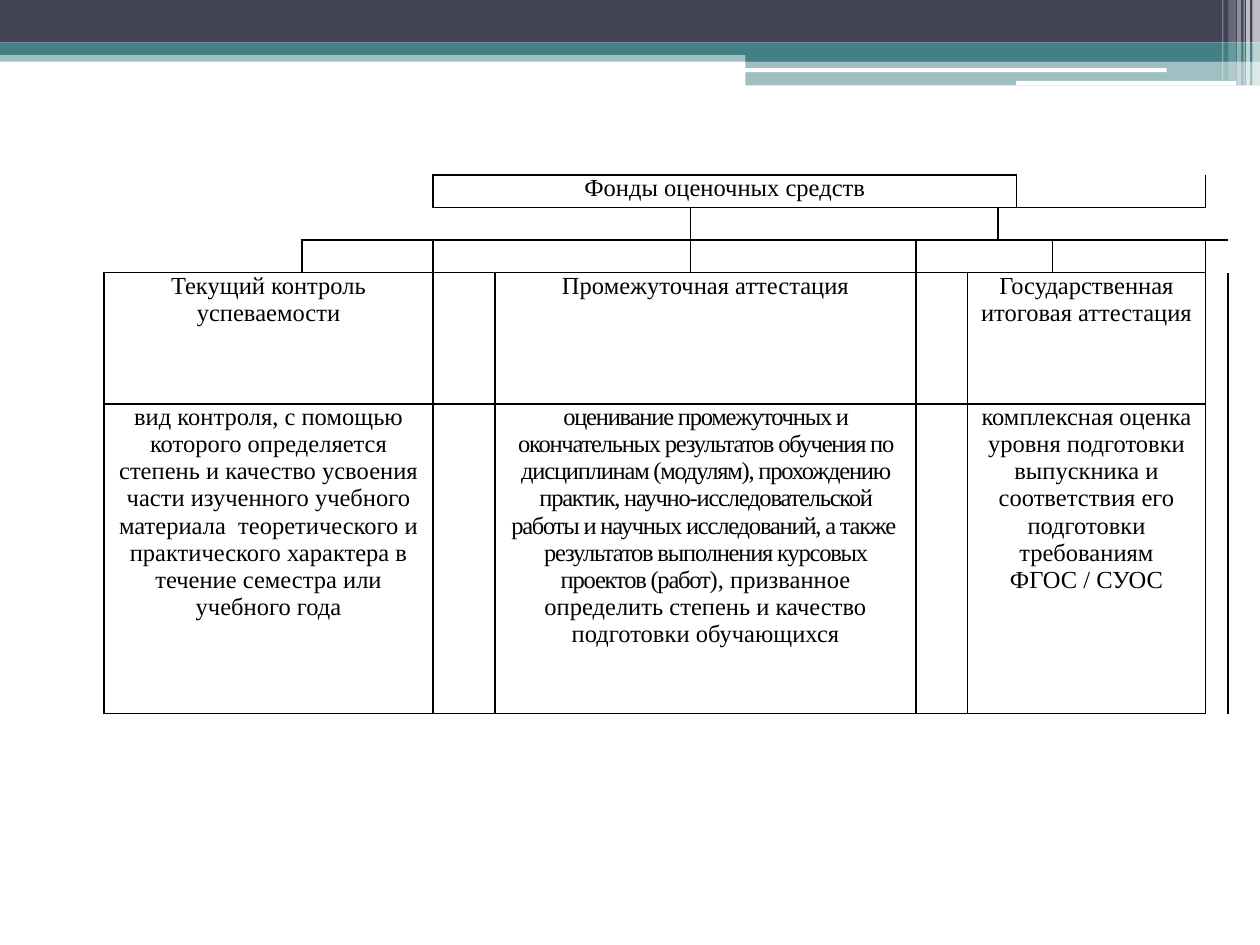
from lxml.etree import SubElement
from pptx import Presentation
from pptx.dml.color import RGBColor
from pptx.enum.shapes import MSO_SHAPE as SHAPE
from pptx.enum.text import PP_ALIGN as ALIGN
from pptx.oxml import parse_xml
from pptx.oxml.ns import nsdecls, qn
from pptx.util import Pt

COLORS = {"navy": "424456", "teal": "438086", "white": "FFFFFF", "black": "000000"}
FONT = "Times New Roman"
NO_STYLE = "{2D5ABB26-0587-4C30-8999-92F81FD0307C}"

# left, top, width, height, colour, opacity in percent
BANDS = [
    (0, 28.8, 720, 6.5, "teal", 50),
    (0, 0, 720, 24.2, "navy", 100),
    (0, 24.2, 720, 7.2, "teal", 100),
    (426, 28, 294, 7.2, "teal", 100),
    (426, 34.6, 294, 14.2, "teal", 50),
]
HIGHLIGHTS = [
    (425.5, 39, 241.2, 2.2, "white", 100),
    (580.5, 46.2, 126, 2.6, "white", 100),
]
# left, width, height, opacity of the vertical stripes
STRIPES = [
    (715.7, 4.3, 49, 65), (712.1, 2.2, 49, 65), (710.6, 0.7, 49, 60),
    (707, 2.2, 49, 40), (702, 4.3, 46, 20), (698.4, 0.7, 46, 30),
]

COLS = [113, 75, 35.5, 21.5, 90, 129, 29.5, 17.3, 10.7, 10.3, 10.3, 87.4, 10.8]
ROWS = [18.6, 18.6, 18.6, 75, 177]

# A paragraph is a list of (text, letter spacing) runs
TITLE = [[("Фонды оценочных средств", 0)]]
CURRENT = [[("Текущий контроль", 0)], [("успеваемости", 0)]]
INTERIM = [[("Промежуточная аттестация", 0)]]
FINAL = [[("Государственная итоговая аттестация", 0)]]
CURRENT_INFO = [[("вид контроля, с помощью которого определяется степень и качество усвоения "
                  "части изученного учебного материала  теоретического и практического "
                  "характера в течение семестра или учебного года", 0)]]
INTERIM_INFO = [[("оценивание промежуточных и окончательных результатов обучения по "
                  "дисциплинам (модулям), прохождению практик, научно-исследовательской "
                  "работы и научных исследований, а также  результатов выполнения "
                  "курсовых проектов (работ)", -0.7),
                 (", призванное определить степень и качество подготовки обучающихся", 0)]]
FINAL_INFO = [[("комплексная оценка уровня подготовки выпускника и соответствия его "
                "подготовки требованиям ФГОС / СУОС", 0)]]

# For each row: first column, last column, drawn sides, paragraphs
CELLS = [
    [(0, 1, "R", []), (2, 8, "LRTB", TITLE), (9, 11, "L", [])],
    [(0, 1, "", []), (2, 3, "TB", []), (4, 4, "RTB", []), (5, 7, "LTB", []),
     (8, 9, "TB", []), (10, 12, "", [])],
    [(0, 0, "RB", []), (1, 1, "LTB", []), (2, 2, "T", []), (3, 4, "RTB", []),
     (5, 5, "LTB", []), (6, 6, "T", []), (7, 10, "RTB", []), (11, 11, "LB", [])],
    [(0, 1, "LRTB", CURRENT), (2, 2, "LRB", []), (3, 5, "LRTB", INTERIM),
     (6, 6, "LRB", []), (7, 11, "LRTB", FINAL), (12, 12, "L", [])],
    [(0, 1, "LRTB", CURRENT_INFO), (2, 2, "LRTB", []), (3, 5, "LRTB", INTERIM_INFO),
     (6, 6, "LRTB", []), (7, 11, "LRTB", FINAL_INFO), (12, 12, "L", [])],
]


def add_band(slide, left, top, width, height, color, opacity, kind=SHAPE.RECTANGLE):
    sp = slide.shapes.add_shape(kind, Pt(left), Pt(top), Pt(width), Pt(height))
    sp.shadow.inherit = False
    sp.line.fill.background()
    sp.fill.solid()
    sp.fill.fore_color.rgb = RGBColor.from_string(COLORS[color])
    if opacity < 100:
        clr = sp.fill._xPr.find(".//" + qn("a:srgbClr"))
        SubElement(clr, qn("a:alpha")).set("val", str(opacity * 1000))


def set_borders(cell, sides):
    tcPr = cell._tc.get_or_add_tcPr()
    for i, side in enumerate(sides):
        tcPr.insert(i, parse_xml(
            f'<a:ln{side} {nsdecls("a")} w="12700"><a:solidFill>'
            f'<a:srgbClr val="{COLORS["black"]}"/></a:solidFill></a:ln{side}>'))


def write_text(cell, paragraphs):
    tf = cell.text_frame
    for i, runs in enumerate(paragraphs):
        p = tf.add_paragraph() if i else tf.paragraphs[0]
        p.alignment = ALIGN.CENTER
        for text, spacing in runs:
            r = p.add_run()
            r.text = text
            r.font.size = Pt(14)
            r.font.name = FONT
            r.font.color.rgb = RGBColor.from_string(COLORS["black"])
            if spacing:
                r._r.get_or_add_rPr().set("spc", str(round(spacing * 100)))


def clear_cell(cell):
    cell.fill.background()
    cell.margin_left = cell.margin_right = Pt(5)
    cell.margin_top = cell.margin_bottom = 0
    # A small mark keeps empty cells from stretching the low rows
    end = SubElement(cell.text_frame.paragraphs[0]._p, qn("a:endParaRPr"))
    end.set("sz", "1000")


def add_scheme(slide):
    frame = slide.shapes.add_table(len(ROWS), len(COLS), Pt(59.5), Pt(100),
                                   Pt(sum(COLS)), Pt(sum(ROWS)))
    table = frame.table
    table.first_row = table.horz_banding = False
    table._tbl.tblPr.find(qn("a:tableStyleId")).text = NO_STYLE
    for column, width in zip(table.columns, COLS):
        column.width = Pt(width)
    for row, height in zip(table.rows, ROWS):
        row.height = Pt(height)
    for cell in table.iter_cells():
        clear_cell(cell)
    for y, row in enumerate(CELLS):
        for first, last, sides, paragraphs in row:
            cell = table.cell(y, first)
            if last > first:
                cell.merge(table.cell(y, last))
            set_borders(cell, sides)
            write_text(cell, paragraphs)


def main():
    prs = Presentation()
    prs.slide_width, prs.slide_height = Pt(720), Pt(540)
    slide = prs.slides.add_slide(prs.slide_layouts[6])

    # Header decoration
    for band in BANDS:
        add_band(slide, *band)
    for band in HIGHLIGHTS:
        add_band(slide, *band, kind=SHAPE.ROUNDED_RECTANGLE)
    for left, width, height, opacity in STRIPES:
        add_band(slide, left, 0, width, height, "white", opacity)

    # Scheme of assessment types
    add_scheme(slide)
    prs.save("out.pptx")


if __name__ == "__main__":
    main()
